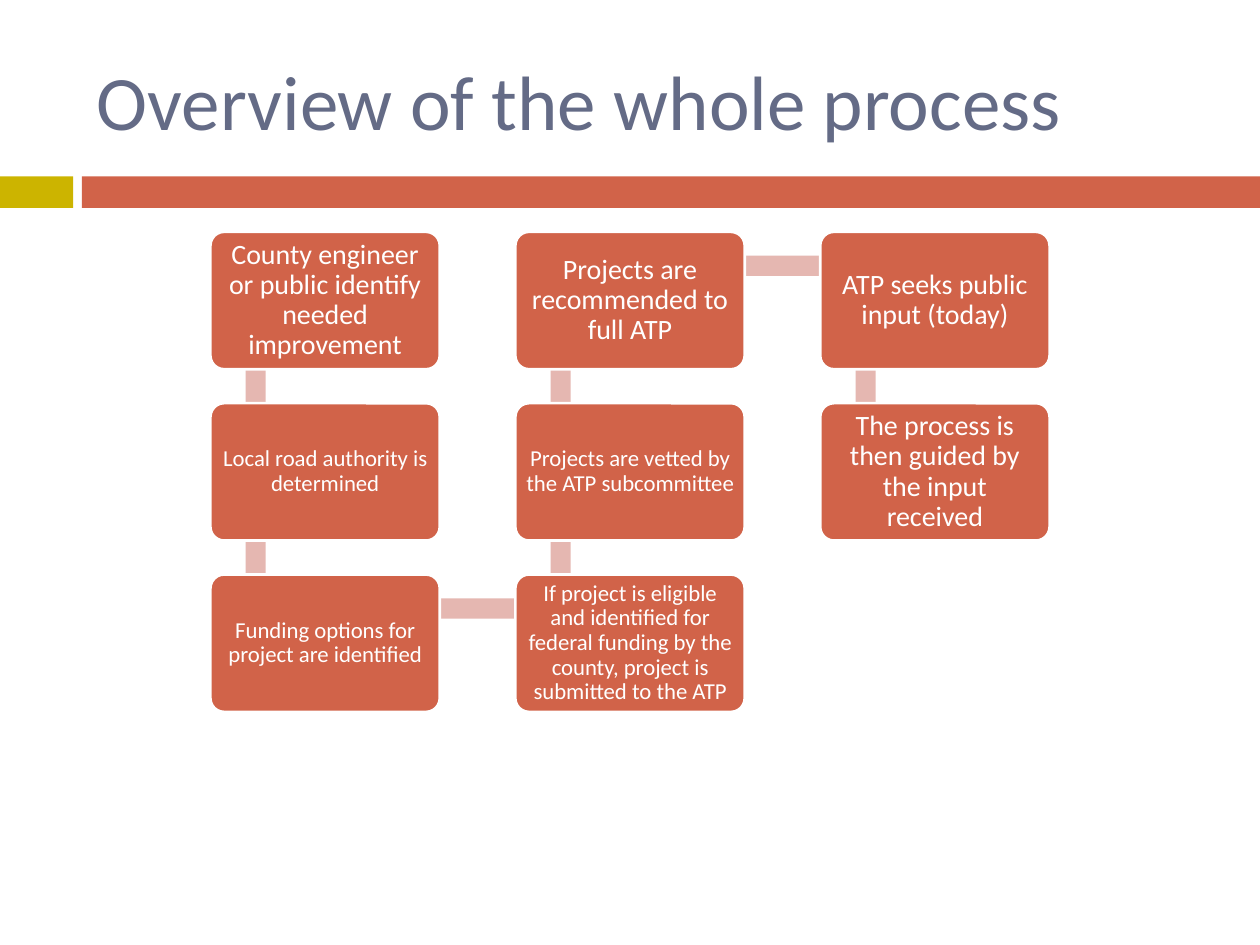
from pptx import Presentation
from pptx.dml.color import RGBColor
from pptx.enum.shapes import MSO_SHAPE
from pptx.enum.text import MSO_ANCHOR, PP_ALIGN
from pptx.util import Inches, Pt

RECT, ROUNDED = MSO_SHAPE.RECTANGLE, MSO_SHAPE.ROUNDED_RECTANGLE
MIDDLE = MSO_ANCHOR.MIDDLE
LEFT, CENTER = PP_ALIGN.LEFT, PP_ALIGN.CENTER

# Grid of process steps
GRID_X, GRID_Y = 1.67, 1.84
PITCH_X, PITCH_Y = 2.42, 1.36
BOX_W, BOX_H = 1.82, 1.09
BAR = 0.16

# Column, row, font size, text, in process order
STEPS = [
    (0, 0, 16, "County engineer or public identify needed improvement"),
    (0, 1, 13, "Local road authority is determined"),
    (0, 2, 13, "Funding options for project are identified"),
    (1, 2, 13, "If project is eligible and identified for federal funding "
               "by the county, project is submitted to the ATP"),
    (1, 1, 13, "Projects are vetted by the ATP subcommittee"),
    (1, 0, 16, "Projects are recommended to full ATP"),
    (2, 0, 16, "ATP seeks public input (today)"),
    (2, 1, 16, "The process is then guided by the input received"),
]


def rgb(value):
    return RGBColor.from_string(value)


class Deck:
    font = "Calibri"
    accent, gold, link_color = "D16349", "CCB400", "E5B7B1"
    title_color, white = "646B86", "FFFFFF"

    def __init__(self, slide):
        self.s = slide

    def shape(self, kind, x, y, w, h, fill):
        sp = self.s.shapes.add_shape(kind, Inches(x), Inches(y), Inches(w), Inches(h))
        sp.shadow.inherit = False
        sp.fill.solid()
        sp.fill.fore_color.rgb = rgb(fill)
        sp.line.fill.background()
        return sp

    def add_text(self, sp, text, size, color, align, inset):
        tf = sp.text_frame
        tf.word_wrap = True
        tf.vertical_anchor = MIDDLE
        tf.margin_left = tf.margin_right = Inches(inset)
        tf.margin_top = tf.margin_bottom = Inches(min(inset, 0.07))
        p = tf.paragraphs[0]
        p.alignment = align
        r = p.add_run()
        r.text = text
        r.font.name = self.font
        r.font.size = Pt(size)
        r.font.color.rgb = rgb(color)
        return p

    def title(self, text, x, y, w, h):
        sp = self.s.shapes.add_textbox(Inches(x), Inches(y), Inches(w), Inches(h))
        self.add_text(sp, text, 44, self.title_color, LEFT, 0.1)

    def step(self, col, row, size, text):
        sp = self.shape(ROUNDED, GRID_X + col * PITCH_X, GRID_Y + row * PITCH_Y,
                        BOX_W, BOX_H, self.accent)
        sp.adjustments[0] = 0.1
        sp.line.color.rgb = rgb(self.white)
        sp.line.width = Pt(1.5)
        inset = 0.07 if size == 16 else 0.05
        p = self.add_text(sp, text, size, self.white, CENTER, inset)
        p.line_spacing = 0.9

    def link(self, start, end):
        x = GRID_X + min(start[0], end[0]) * PITCH_X
        y = GRID_Y + min(start[1], end[1]) * PITCH_Y
        if start[0] == end[0]:
            self.shape(RECT, x + 0.28, y + 0.28, BAR, PITCH_Y, self.link_color)
        else:
            self.shape(RECT, x + 0.37, y + 0.19, PITCH_X, BAR, self.link_color)


def main():
    prs = Presentation()
    prs.slide_width, prs.slide_height = Inches(10), Inches(7.5)
    deck = Deck(prs.slides.add_slide(prs.slide_layouts[6]))

    # Title and band
    deck.shape(RECT, 0, 1.4, 0.58, 0.25, deck.gold)
    deck.shape(RECT, 0.65, 1.4, 9.35, 0.25, deck.accent)
    deck.title("Overview of the whole process", 0.67, 0.25, 8.92, 1.08)

    # Links lie behind the steps
    for start, end in zip(STEPS, STEPS[1:]):
        deck.link(start, end)
    for step in STEPS:
        deck.step(*step)

    prs.save("out.pptx")


if __name__ == "__main__":
    main()
